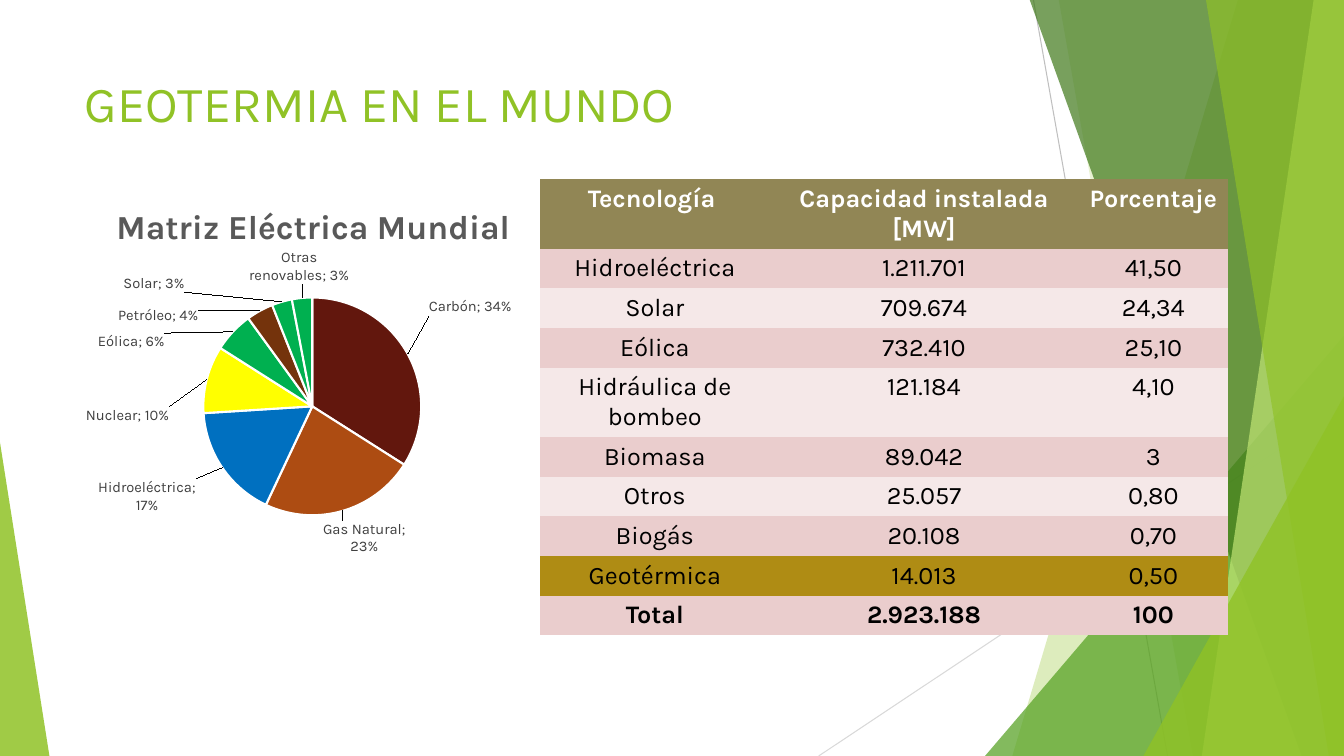
from pptx import Presentation
from pptx import util as u
from pptx.chart.data import CategoryChartData
from pptx.dml.color import RGBColor
from pptx.enum import chart as charts, shapes, text
from pptx.oxml import parse_xml
from pptx.oxml.ns import nsdecls, qn

COLORS = {
    "lime": "90C226", "green": "54A021", "forest": "3F7819", "pale": "C0E474",
    "gray": "BFBFBF", "light gray": "D9D9D9", "white": "FFFFFF", "black": "000000",
    "chart title": "595959", "chart label": "404040",
    "header": "918655", "odd": "EACDCD", "even": "F5E8E8", "highlight": "AF8C14",
    "coal": "62170D", "gas": "AD4C12", "hydro": "0070C0", "nuclear": "FFFF00",
    "renewable": "00B050", "oil": "74330C",
}
NO_GRID_STYLE = "{2D5ABB26-0587-4C30-8999-92F81FD0307C}"

# Facets: (top-left x, bottom-left x, colour, opacity %), all reaching the right edge
BACK_FACETS = [(12.28, 10.04, "lime", 30), (10.5, 11.83, "lime", 20)]
FRONT_FACETS = [(10.21, 12.91, "forest", 70), (13.03, 11.92, "pale", 70),
                (11.96, 13.18, "lime", 65)]

# Category, share, colour, label shift as a fraction of the chart
SHARES = [
    ("Carbón", 0.34, "coal", (0.03, -0.09)),
    ("Gas Natural", 0.23, "gas", (-0.04, 0.01)),
    ("Hidroeléctrica", 0.17, "hydro", (-0.04, 0.02)),
    ("Nuclear", 0.10, "nuclear", (-0.06, 0.12)),
    ("Eólica", 0.06, "renewable", (-0.12, 0.06)),
    ("Petróleo", 0.04, "oil", (-0.11, 0.05)),
    ("Solar", 0.03, "renewable", (-0.18, -0.01)),
    ("Otras renovables", 0.03, "renewable", (0.09, -0.02)),
]

CAPACITY = [
    ("Tecnología ", "Capacidad instalada [MW]", "Porcentaje"),
    ("Hidroeléctrica", "1.211.701", "41,50"),
    ("Solar", "709.674", "24,34"),
    ("Eólica", "732.410", "25,10"),
    ("Hidráulica de bombeo", "121.184", "4,10"),
    ("Biomasa", "89.042", "3"),
    ("Otros", "25.057", "0,80"),
    ("Biogás", "20.108", "0,70"),
    ("Geotérmica", "14.013", "0,50"),
    ("Total", "2.923.188", "100"),
]


def rgb(name):
    return RGBColor.from_string(COLORS[name])


def set_layout(element, index, **values):
    """Give a chart part a manual layout, as the child at the given index."""
    for old in element.findall(qn("c:layout")):
        element.remove(old)
    parts = "".join(f'<c:{key} val="{value}"/>' for key, value in values.items())
    element.insert(index, parse_xml(
        f'<c:layout {nsdecls("c")}><c:manualLayout>{parts}</c:manualLayout></c:layout>'))


class SlideBuilder:
    font_name = "Karla"

    def __init__(self, deck):
        self.page = deck.slides.add_slide(deck.slide_layouts[5])
        self.width, self.height = 13.33, 7.5

    def style(self, font, color, **values):
        for key, value in {"name": self.font_name, **values}.items():
            setattr(font, key, value)
        font.color.rgb = rgb(color)

    def paint(self, shape, color, opacity):
        shape.shadow.inherit = False
        shape.fill.solid()
        shape.fill.fore_color.rgb = rgb(color)
        shape.line.fill.background()
        fill = shape.fill._xPr.find(qn("a:solidFill"))
        fill[0].append(parse_xml(f'<a:alpha {nsdecls("a")} val="{opacity * 1000}"/>'))

    def line(self, start, end, color):
        ends = [u.Inches(value) for value in (*start, *end)]
        line = self.page.shapes.add_connector(shapes.MSO_CONNECTOR.STRAIGHT, *ends)
        line.line.color.rgb = rgb(color)
        line.line.width = u.Pt(0.75)
        line._element.spPr.append(parse_xml(f'<a:effectLst {nsdecls("a")}/>'))

    def facet(self, top_x, bottom_x, color, opacity):
        top = -0.01
        builder = self.page.shapes.build_freeform(
            u.Inches(top_x), u.Inches(top))
        corners = [(self.width, top), (self.width, self.height), (bottom_x, self.height)]
        builder.add_line_segments([(u.Inches(x), u.Inches(y)) for x, y in corners])
        self.paint(builder.convert_to_shape(), color, opacity)

    def triangle(self, left, top, width, apex, color, opacity):
        box = [u.Inches(value) for value in (left, top, width, self.height - top)]
        shape = self.page.shapes.add_shape(shapes.MSO_SHAPE.ISOSCELES_TRIANGLE, *box)
        shape.adjustments[0] = apex
        self.paint(shape, color, opacity)

    def title(self, words, left, top, width, height):
        box = self.page.shapes.title
        place = {"left": left, "top": top, "width": width, "height": height}
        for key, value in place.items():
            setattr(box, key, u.Inches(value))
        frame = box.text_frame
        frame.text = words
        frame.vertical_anchor = text.MSO_ANCHOR.TOP
        frame.auto_size = text.MSO_AUTO_SIZE.NONE
        para = frame.paragraphs[0]
        para.alignment = text.PP_ALIGN.LEFT
        self.style(para.runs[0].font, "lime", size=u.Pt(36))
        self.page.shapes._spTree.append(box._element)

    def table(self, rows, left, top, widths, row_height):
        box = [u.Inches(v) for v in (left, top, sum(widths), row_height * len(rows))]
        table = self.page.shapes.add_table(len(rows), len(widths), *box).table
        table.horz_banding = False
        table._tbl.tblPr.find(qn("a:tableStyleId")).text = NO_GRID_STYLE
        for column, width in zip(table.columns, widths):
            column.width = u.Inches(width)
        for i, row in enumerate(rows):
            band = "odd" if i % 2 else "even"
            fill = {"Tecnología ": "header", "Geotérmica": "highlight"}.get(row[0], band)
            for j, words in enumerate(row):
                cell = table.cell(i, j)
                cell.fill.solid()
                cell.fill.fore_color.rgb = rgb(fill)
                cell.text = words
                para = cell.text_frame.paragraphs[0]
                para.alignment = text.PP_ALIGN.CENTER
                self.style(para.runs[0].font, "black" if i else "white",
                           size=u.Pt(18), bold=i in (0, len(rows) - 1))

    def pie(self, heading, shares, left, top, width, height):
        data = CategoryChartData(number_format="0%")
        data.categories = [share[0] for share in shares]
        data.add_series("Series 1", [share[1] for share in shares])
        box = [u.Inches(value) for value in (left, top, width, height)]
        chart = self.page.shapes.add_chart(charts.XL_CHART_TYPE.PIE, *box, data).chart
        self.style(chart.font, "black", size=u.Pt(10.5))
        chart.has_legend = False
        chart.plots[0].vary_by_categories = True

        # Chart heading and pie area
        chart.has_title = True
        frame = chart.chart_title.text_frame
        frame.text = heading
        self.style(frame.paragraphs[0].runs[0].font, "chart title",
                   size=u.Pt(24), bold=True)
        set_layout(chart.chart_title._element, 1,
                   xMode="edge", yMode="edge", x=0.13, y=0.05)
        set_layout(chart._chartSpace.chart.plotArea, 0, layoutTarget="inner",
                   xMode="edge", yMode="edge", x=0.305, y=0.304, w=0.41, h=0.562)

        # Slices and their labels
        series = chart.plots[0].series[0]
        labels = series.data_labels
        formats = {"show_value": True, "show_category_name": True,
                   "number_format": "0%", "number_format_is_linked": False,
                   "position": charts.XL_LABEL_POSITION.OUTSIDE_END}
        for key, value in formats.items():
            setattr(labels, key, value)
        self.style(labels.font, "chart label", size=u.Pt(10.5))
        for i, (_, _, color, _) in enumerate(shares):
            point = series.points[i]
            point.format.fill.solid()
            point.format.fill.fore_color.rgb = rgb(color)
            point.format.line.color.rgb = rgb("white")
            point.format.line.width = u.Pt(1.5)
            point.data_label.position = charts.XL_LABEL_POSITION.OUTSIDE_END
            self.style(point.data_label.font, "chart label", size=u.Pt(10.5))
        group = labels._element
        points = group.findall(qn("c:dLbl"))
        for label, share in zip(points, shares):
            set_layout(label, 1, x=share[3][0], y=share[3][1])
            label.find(qn("c:showCatName")).set("val", "1")
            label.find(qn("c:txPr")).addprevious(parse_xml(
                f'<c:numFmt {nsdecls("c")} formatCode="0%" sourceLinked="0"/>'))
        for element in [group, *points]:
            element.find(qn("c:showBubbleSize")).addnext(
                parse_xml(f'<c:separator {nsdecls("c")}>; </c:separator>'))


def main():
    deck = Presentation()
    deck.slide_width, deck.slide_height = u.Inches(13.33), u.Inches(7.5)
    slide = SlideBuilder(deck)

    # Background decoration
    slide.line((10.25, 0), (11.58, 7.5), "gray")
    slide.line((13.33, 4.03), (8.12, 7.5), "light gray")
    for facet in BACK_FACETS:
        slide.facet(*facet)
    slide.triangle(9.77, 3.33, 3.56, 1, "green", 72)
    for facet in FRONT_FACETS:
        slide.facet(*facet)
    slide.triangle(11.34, 3.93, 1.99, 1, "lime", 80)
    slide.triangle(0, 4.39, 0.49, 0, "lime", 85)

    # Content
    slide.title("GEOTERMIA EN EL MUNDO", 0.74, 0.67, 9.4, 1.44)
    slide.table(CAPACITY, 5.36, 1.78, [2.27, 3.07, 1.48], 0.36)
    slide.pie("Matriz Eléctrica Mundial", SHARES, 0.41, 1.78, 5.27, 3.85)

    deck.save("out.pptx")


if __name__ == "__main__":
    main()
